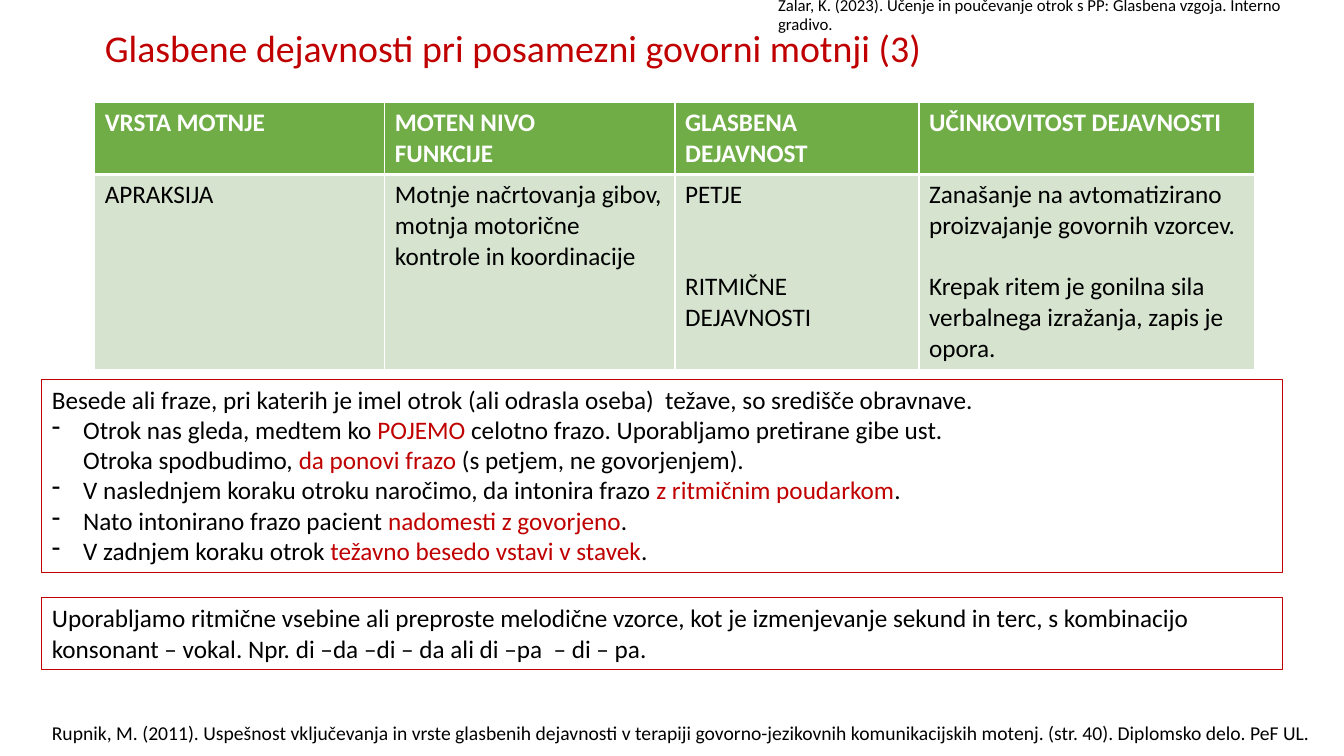
from lxml.etree import SubElement
from pptx import Presentation
from pptx.dml.color import RGBColor
from pptx.enum.shapes import MSO_SHAPE
from pptx.enum.text import MSO_ANCHOR, MSO_AUTO_SIZE, PP_ALIGN
from pptx.oxml.ns import qn
from pptx.util import Inches, Pt

COLORS = {"red": "C00000", "black": "000000", "white": "FFFFFF",
          "green": "70AD47", "pale": "D5E3CF"}
COLUMNS, ROWS = 64, 36
INDENT = Inches(0.31)


def rgb(name):
    return RGBColor.from_string(COLORS[name])


def write(p, text, size=18, color="black", bold=False, spacing=None, before=0):
    """Fill a paragraph; *marked* parts turn red and newlines become line breaks."""
    p.alignment = PP_ALIGN.LEFT
    p.space_before = Pt(before)
    if spacing:
        p.line_spacing = spacing
    for i, part in enumerate(text.split("*")):
        for j, line in enumerate(part.split("\n")):
            if j:
                p.add_line_break()
            if line:
                r = p.add_run()
                r.text = line
                r.font.name = "Calibri"
                r.font.size = Pt(size)
                r.font.bold = bold
                r.font.color.rgb = rgb("red" if i % 2 else color)


class Deck:
    """Holds the style and the current slide."""

    def __init__(self):
        self.prs = Presentation()
        self.prs.slide_width, self.prs.slide_height = Inches(13.333), Inches(7.5)
        self.slide = self.prs.slides.add_slide(self.prs.slide_layouts[5])

    def x(self, columns):
        return int(self.prs.slide_width * columns / COLUMNS)

    def y(self, rows):
        return int(self.prs.slide_height * rows / ROWS)

    def area(self, left, top, width, height):
        return self.x(left), self.y(top), self.x(width), self.y(height)

    def title(self, text, *area, **fmt):
        sp = self.slide.shapes.title
        sp.left, sp.top, sp.width, sp.height = self.area(*area)
        tf = sp.text_frame
        tf.auto_size = MSO_AUTO_SIZE.NONE
        tf.vertical_anchor = MSO_ANCHOR.MIDDLE
        write(tf.paragraphs[0], text, **fmt)

    def text(self, text, *area, wrap=True, anchor=MSO_ANCHOR.TOP, **fmt):
        tf = self.slide.shapes.add_textbox(*self.area(*area)).text_frame
        tf.word_wrap = wrap
        tf.vertical_anchor = anchor
        write(tf.paragraphs[0], text, **fmt)

    def box(self, lead, *area, bullets=()):
        sp = self.slide.shapes.add_shape(MSO_SHAPE.RECTANGLE, *self.area(*area))
        sp.shadow.inherit = False
        sp.fill.background()
        sp.line.color.rgb = rgb("red")
        sp.line.width = Pt(0.75)
        tf = sp.text_frame
        tf.word_wrap = True
        tf.vertical_anchor = MSO_ANCHOR.TOP
        write(tf.paragraphs[0], lead)
        for bullet in bullets:
            p = tf.add_paragraph()
            write(p, bullet)
            pPr = p._p.get_or_add_pPr()
            pPr.set("marL", str(INDENT))
            pPr.set("indent", str(-INDENT))
            SubElement(pPr, qn("a:buChar"), char="-")

    def table(self, rows, left, top, widths, heights):
        area = self.area(left, top, sum(widths), sum(heights))
        tbl = self.slide.shapes.add_table(len(rows), len(widths), *area).table
        for column, width in zip(tbl.columns, widths):
            column.width = self.x(width)
        for i, (row, height) in enumerate(zip(rows, heights)):
            tbl.rows[i].height = self.y(height)
            for j, paragraphs in enumerate(row):
                self.cell(tbl.cell(i, j), paragraphs, header=i == 0)

    def cell(self, cell, paragraphs, header):
        thick = "B" if header else "T"
        tcPr = cell._tc.get_or_add_tcPr()
        for side in "LRTB":
            ln = SubElement(tcPr, qn(f"a:ln{side}"), w=str(Pt(3 if side == thick else 1)))
            SubElement(SubElement(ln, qn("a:solidFill")), qn("a:srgbClr"), val=COLORS["white"])
        cell.fill.solid()
        cell.fill.fore_color.rgb = rgb("green" if header else "pale")
        tf = cell.text_frame
        for i, (text, before) in enumerate(paragraphs):
            p = tf.add_paragraph() if i else tf.paragraphs[0]
            write(p, text, color="white" if header else "black", bold=header, before=before)


def main():
    deck = Deck()
    deck.title("Glasbene dejavnosti pri posamezni govorni motnji (3)",
               4.51, 1.49, 55.2, 2.11, size=27, color="red", spacing=0.7)
    headers = ["VRSTA MOTNJE", "MOTEN NIVO\nFUNKCIJE", "GLASBENA DEJAVNOST",
               "UČINKOVITOST DEJAVNOSTI"]
    apraxia = [
        [("APRAKSIJA", 0)],
        [("Motnje načrtovanja gibov, motnja motorične kontrole in koordinacije", 0)],
        [("PETJE", 0), ("RITMIČNE DEJAVNOSTI", 44)],
        [("Zanašanje na avtomatizirano proizvajanje govornih vzorcev.", 0),
         ("Krepak ritem je gonilna sila verbalnega izražanja, zapis je opora.", 22)],
    ]
    deck.table([[[(h, 0)] for h in headers], apraxia], 4.51, 4.9,
               widths=[13.82, 13.82, 11.62, 15.98], heights=[3.41, 9.15])
    deck.box("Besede ali fraze, pri katerih je imel otrok (ali odrasla oseba)  težave, "
             "so središče obravnave.", 2, 18.05, 59.09, 9.22, bullets=[
                 "Otrok nas gleda, medtem ko *POJEMO *celotno frazo. Uporabljamo pretirane "
                 "gibe ust.\nOtroka spodbudimo, *da ponovi frazo *(s petjem, ne govorjenjem).",
                 "V naslednjem koraku otroku naročimo, da intonira frazo *z ritmičnim poudarkom*.",
                 "Nato intonirano frazo pacient *nadomesti z govorjeno*.",
                 "V zadnjem koraku otrok *težavno besedo vstavi v stavek*."])
    deck.box("Uporabljamo ritmične vsebine ali preproste melodične vzorce, kot je izmenjevanje "
             "sekund in terc, s kombinacijo konsonant – vokal. Npr. di –da –di – da ali "
             "di –pa  – di – pa.", 2, 28.46, 59.09, 3.41)
    deck.text("Rupnik, M. (2011). Uspešnost vključevanja in vrste glasbenih dejavnosti v terapiji "
              "govorno-jezikovnih komunikacijskih motenj. (str. 40). Diplomsko delo. PeF UL.",
              2, 34.08, 61.01, 1.63, wrap=False, size=14)
    deck.text("Zalar, K. (2023). Učenje in poučevanje otrok s PP: Glasbena vzgoja. "
              "Interno gradivo.", 36.58, 0, 27.42, 1.49,
              anchor=MSO_ANCHOR.MIDDLE, size=12, spacing=0.9)
    deck.prs.save("out.pptx")


if __name__ == "__main__":
    main()
